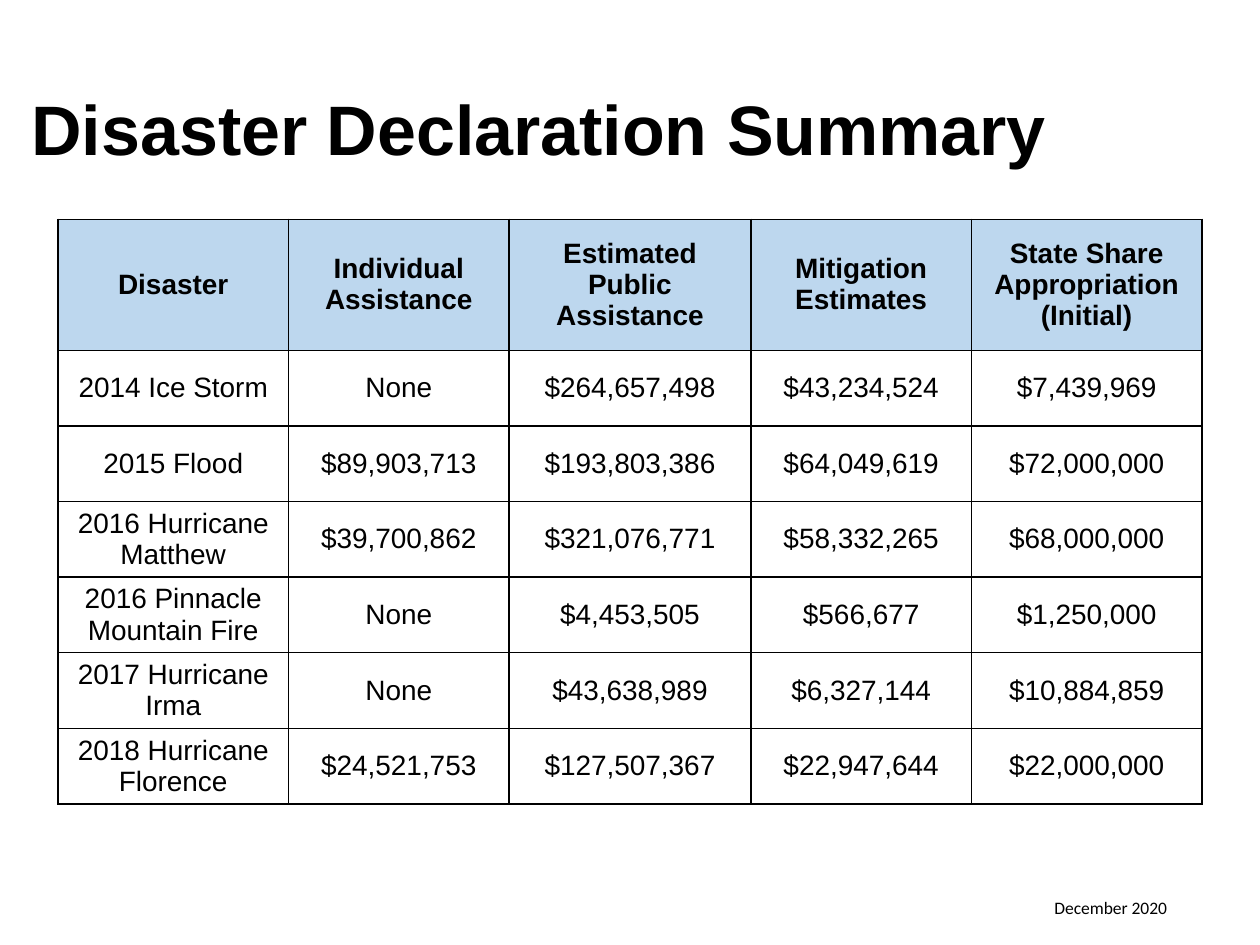
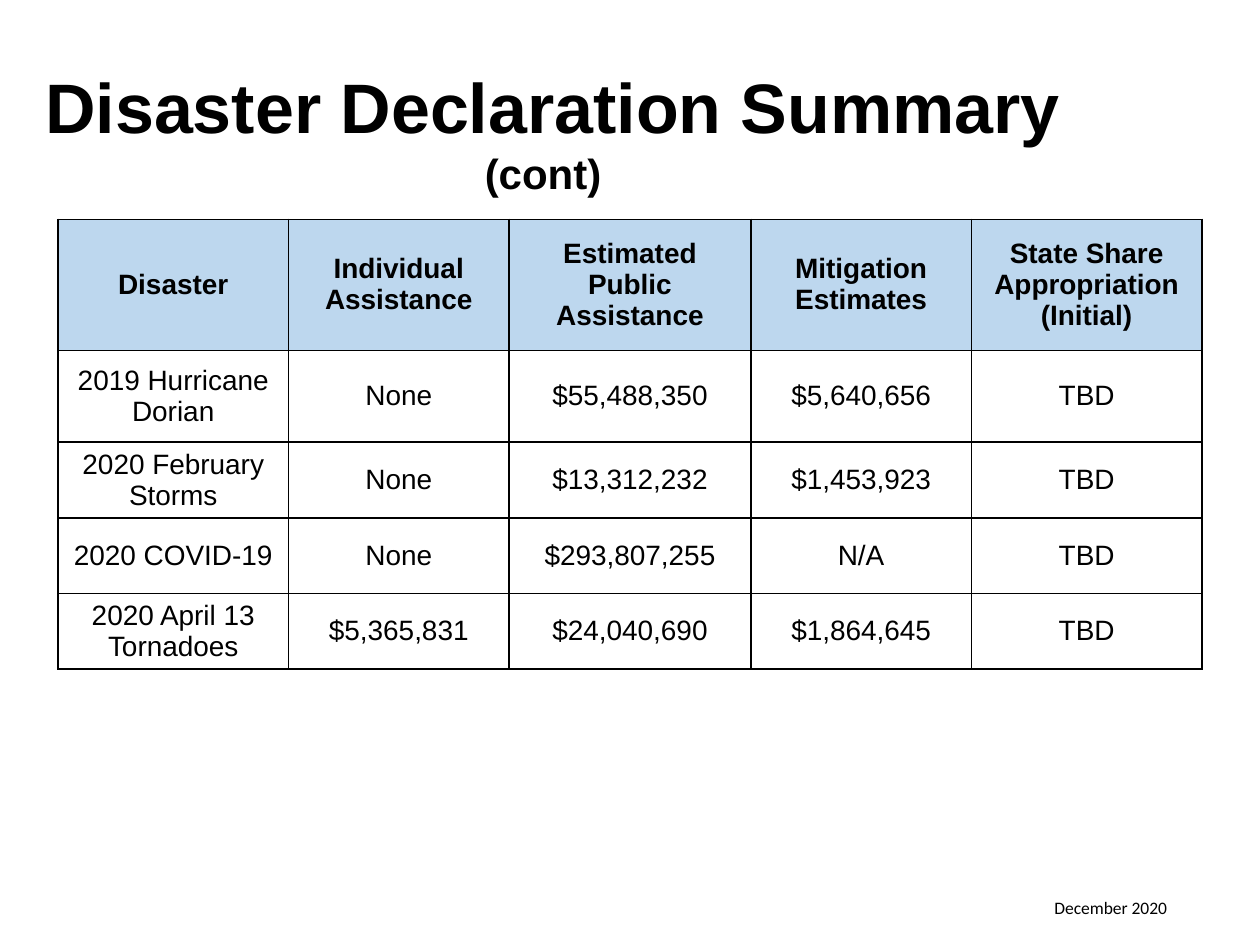
import pptx
import pptx.util
import pptx.dml.color
import pptx.enum.text
import pptx.oxml
import pptx.oxml.ns

Inches = pptx.util.Inches
Pt = pptx.util.Pt
ALIGN = pptx.enum.text.PP_ALIGN
MIDDLE = pptx.enum.text.MSO_ANCHOR.MIDDLE

WIDTHS = [1.83, 1.75, 1.92, 1.75, 1.83]
HEAD = ["Disaster", "Individual\nAssistance", "Estimated\nPublic Assistance",
        "Mitigation\nEstimates", "State Share Appropriation\n(Initial)"]
PAST = [
    ["2014 Ice Storm", "None", "$264,657,498", "$43,234,524", "$7,439,969"],
    ["2015 Flood", "$89,903,713", "$193,803,386", "$64,049,619", "$72,000,000"],
    ["2016 Hurricane Matthew", "$39,700,862", "$321,076,771", "$58,332,265", "$68,000,000"],
    ["2016 Pinnacle Mountain Fire", "None", "$4,453,505", "$566,677", "$1,250,000"],
    ["2017 Hurricane Irma", "None", "$43,638,989", "$6,327,144", "$10,884,859"],
    ["2018 Hurricane Florence", "$24,521,753", "$127,507,367", "$22,947,644", "$22,000,000"],
]
RECENT = [
    ["2019 Hurricane\nDorian", "None", "$55,488,350", "$5,640,656", "TBD"],
    ["2020 February Storms", "None", "$13,312,232", "$1,453,923", "TBD"],
    ["2020 COVID-19", "None", "$293,807,255", "N/A", "TBD"],
    ["2020 April 13 Tornadoes", "$5,365,831", "$24,040,690", "$1,864,645", "TBD"],
]


def color(text):
    return pptx.dml.color.RGBColor.from_string(text)


class Deck:
    ink, head, paper = "000000", "BDD7EE", "FFFFFF"
    face, small = "Arial", "Calibri"

    def __init__(self):
        self.file = pptx.Presentation()
        self.file.slide_width = Inches(10)
        self.file.slide_height = Inches(7.5)
        self.slide = None

    def start(self):
        self.slide = self.file.slides.add_slide(self.file.slide_layouts[5])

    def style(self, font, size, bold=False, face=face):
        font.name, font.size, font.bold = face, Pt(size), bold
        font.color.rgb = color(self.ink)

    def title(self, text, top, width, align, more=None):
        shape = self.slide.shapes.title
        shape.left, shape.top = 0, Inches(top)
        shape.width, shape.height = Inches(width), Inches(1.45)
        frame = shape.text_frame
        frame.word_wrap = True
        frame.vertical_anchor = MIDDLE
        line = frame.paragraphs[0]
        line.alignment = align
        line._p.get_or_add_pPr().set("indent", str(Inches(0.15)))
        self.style(line.font, 40, True)
        line.add_run().text = text
        if more:
            line.add_line_break()
            run = line.add_run()
            run.text = more
            run.font.size = Pt(24)

    def border(self, cell):
        props = cell._tc.get_or_add_tcPr()
        for place, side in enumerate("LRTB"):
            edge = pptx.oxml.parse_xml(
                f'<a:ln{side} {pptx.oxml.ns.nsdecls("a")} w="{Pt(1)}"><a:solidFill>'
                f'<a:srgbClr val="{self.ink}"/></a:solidFill></a:ln{side}>')
            props.insert(place, edge)

    def cell(self, cell, text, head):
        cell.text = text
        cell.vertical_anchor = MIDDLE
        cell.margin_left = cell.margin_right = Inches(0.07)
        cell.margin_top = cell.margin_bottom = Inches(0.04)
        cell.fill.solid()
        cell.fill.fore_color.rgb = color(self.head if head else self.paper)
        for line in cell.text_frame.paragraphs:
            line.alignment = ALIGN.CENTER
            self.style(line.font, 16, head)
        self.border(cell)

    def table(self, rows, heights):
        rows = [HEAD] + rows
        grid = self.slide.shapes.add_table(
            len(rows), len(HEAD), Inches(0.46), Inches(1.74),
            Inches(sum(WIDTHS)), Inches(sum(heights))).table
        for column, width in zip(grid.columns, WIDTHS):
            column.width = Inches(width)
        for r, (row, height) in enumerate(zip(rows, heights)):
            grid.rows[r].height = Inches(height)
            for c, text in enumerate(row):
                self.cell(grid.cell(r, c), text, r == 0)

    def footer(self, text):
        box = self.slide.shapes.add_textbox(
            Inches(8.27), Inches(7.07), Inches(1.11), Inches(0.27))
        box.text_frame.word_wrap = False
        line = box.text_frame.paragraphs[0]
        line.text = text
        self.style(line.font, 10, face=self.small)


def main():
    deck = Deck()
    name, date = "Disaster Declaration Summary", "December 2020"

    deck.start()
    deck.title(name, 0.29, 8.71, ALIGN.LEFT)
    deck.table(PAST, [1.04] + [0.6] * len(PAST))
    deck.footer(date)

    deck.start()
    deck.title(name, 0.31, 8.62, ALIGN.CENTER, "(cont)")
    deck.table(RECENT, [1.04, 0.73] + [0.6] * (len(RECENT) - 1))
    deck.footer(date)

    deck.file.save("out.pptx")


if __name__ == "__main__":
    main()
